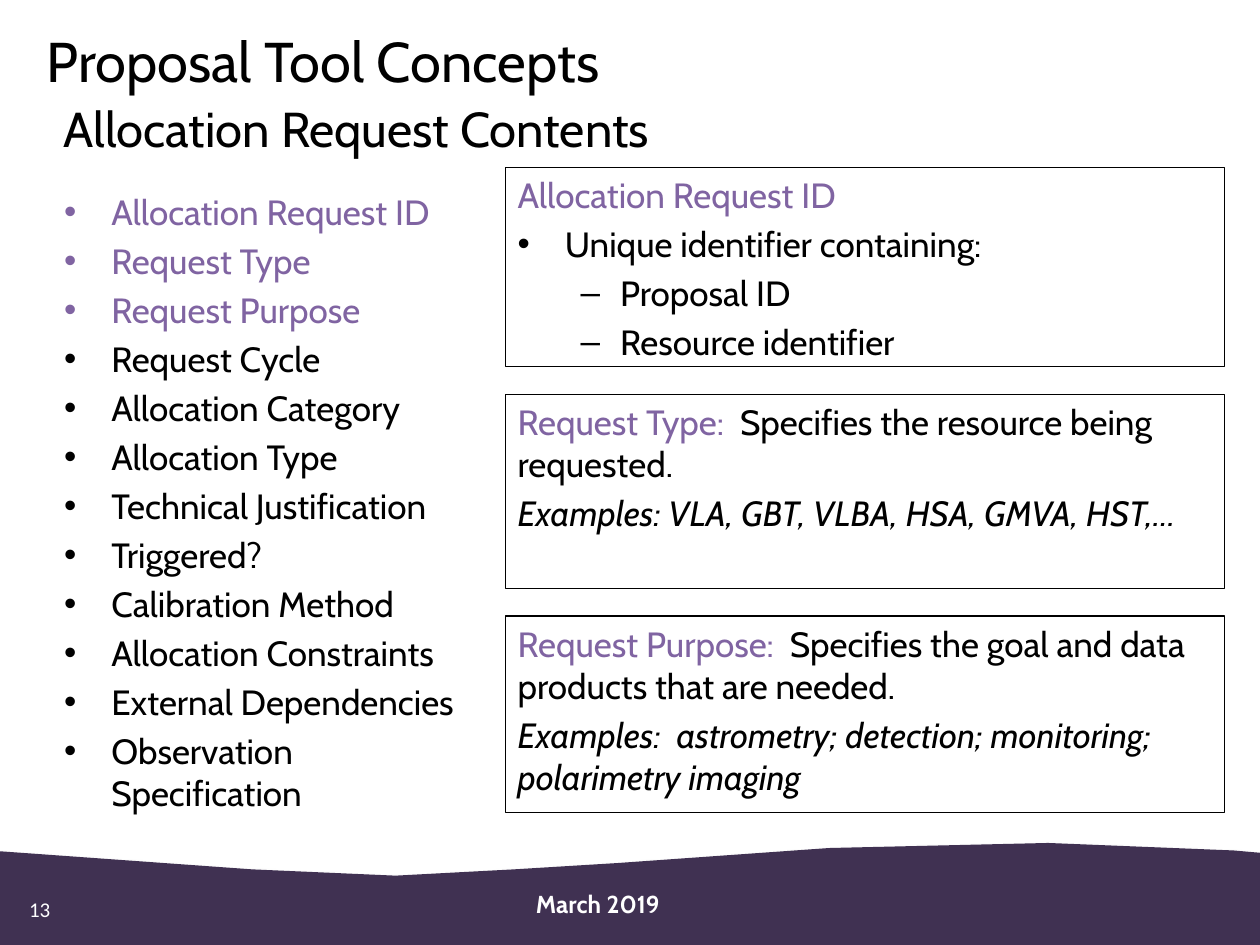
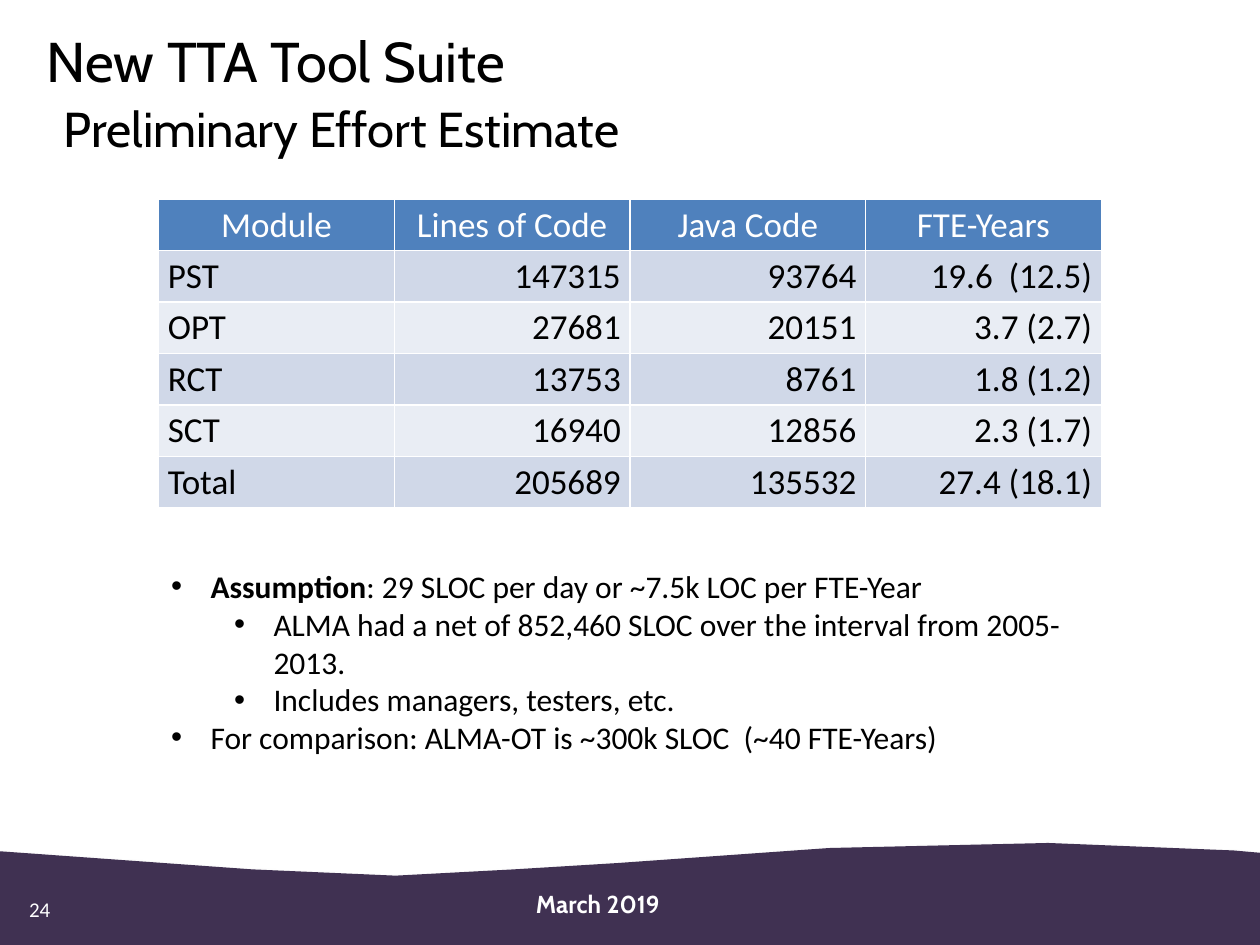
from lxml.etree import SubElement
from pptx import Presentation
from pptx.dml.color import RGBColor
from pptx.enum.shapes import MSO_SHAPE as Shape
from pptx.enum.text import MSO_ANCHOR as Anchor, MSO_AUTO_SIZE as AutoSize, PP_ALIGN as Align
from pptx.oxml.ns import qn
from pptx.util import Pt

BLACK = RGBColor(0x00, 0x00, 0x00)
WHITE = RGBColor(0xFF, 0xFF, 0xFF)
BAND_PURPLE = RGBColor(0x40, 0x31, 0x52)
TERM_PURPLE = RGBColor(0x80, 0x64, 0xA2)
HEADER_BLUE = RGBColor(0x4F, 0x81, 0xBD)
ROW_DARK = RGBColor(0xD0, 0xD8, 0xE8)
ROW_LIGHT = RGBColor(0xE9, 0xED, 0xF4)

HEADING_FONT = "Cabin"
BODY_FONT = "Calibri"

WAVE = [(-6.5, 486), (144, 496.8), (226, 500.4), (293.8, 496.8), (352.8, 493.2),
        (473.8, 484.6), (599, 481.7), (704.9, 486), (730, 488.2), (729.4, 547.2), (-5, 545.8)]

HIGHLIGHTED_FIELDS = ["Allocation Request ID", "Request Type", "Request Purpose"]
OTHER_FIELDS = ["Request Cycle", "Allocation Category", "Allocation Type",
                "Technical Justification", "Triggered?", "Calibration Method",
                "Allocation Constraints", "External Dependencies", "Observation Specification"]

ITEM = dict(bullet="•", margin=27, hanging=27)
SUBITEM = dict(bullet="–", margin=58.5, hanging=22.5, level=1)
DEFINITIONS = [
    (113.8, [
        ([("Allocation Request ID", TERM_PURPLE)], {}),
        ("Unique identifier containing:", ITEM),
        ("Proposal ID", SUBITEM),
        ("Resource identifier", SUBITEM)]),
    (110.9, [
        ([("Request Type:  ", TERM_PURPLE), ("Specifies the resource being requested.", BLACK)], {}),
        ("Examples: VLA, GBT, VLBA, HSA, GMVA, HST,…", dict(italic=True))]),
    (112.3, [
        ([("Request Purpose:  ", TERM_PURPLE),
          ("Specifies the goal and data products that are needed.", BLACK)], {}),
        ("Examples:  astrometry; detection; monitoring; polarimetry imaging", dict(italic=True))]),
]

EFFORT = [
    ("Module", "Lines of Code", "Java Code", "FTE-Years"),
    ("PST", "147315", "93764", "19.6  (12.5)"),
    ("OPT", "27681", "20151", "3.7 (2.7)"),
    ("RCT", "13753", "8761", "1.8 (1.2)"),
    ("SCT", "16940", "12856", "2.3 (1.7)"),
    ("Total", "205689", "135532", "27.4 (18.1)"),
]


def write(frame, text, font=HEADING_FONT, size=20, color=BLACK, bold=False, italic=False,
          align=Align.LEFT, before=0, bullet=None, margin=0, hanging=0, level=0, lead=""):
    started = bool(frame.text)
    paragraph = frame.add_paragraph() if started else frame.paragraphs[0]
    paragraph.alignment = align
    paragraph.level = level
    paragraph.space_before = Pt(before if started else 0)
    if bullet:
        properties = paragraph._p.get_or_add_pPr()
        properties.set("marL", str(Pt(margin)))
        properties.set("indent", str(-Pt(hanging)))
        SubElement(properties, qn("a:buFont"), typeface="Arial")
        SubElement(properties, qn("a:buChar"), char=bullet)
    pieces = [(text, color)] if isinstance(text, str) else text
    pieces = [(words, tint, bold) for words, tint in pieces]
    if lead:
        pieces.insert(0, (lead, color, True))
    for words, tint, strong in pieces:
        run = paragraph.add_run()
        run.text = words
        run.font.name = font
        run.font.size = Pt(size)
        run.font.color.rgb = tint
        run.font.bold = strong
        run.font.italic = italic


def add_text_area(slide, left, top, width, height, wrap=True, inset=True):
    frame = slide.shapes.add_textbox(Pt(left), Pt(top), Pt(width), Pt(height)).text_frame
    frame.word_wrap = wrap
    if not inset:
        frame.margin_left = frame.margin_top = frame.margin_right = frame.margin_bottom = 0
    return frame


def add_band(slide):
    builder = slide.shapes.build_freeform(Pt(WAVE[0][0]), Pt(WAVE[0][1]))
    builder.add_line_segments([(Pt(x), Pt(y)) for x, y in WAVE[1:]], close=True)
    band = builder.convert_to_shape()
    band.fill.solid()
    band.fill.fore_color.rgb = BAND_PURPLE
    band.line.fill.background()
    band.shadow.inherit = False
    effects = band._element.spPr.find(qn("a:effectLst"))
    shadow = SubElement(effects, qn("a:outerShdw"), blurRad=str(Pt(3.1)), dist=str(Pt(1.8)),
                        dir="5400000", rotWithShape="0")
    shade = SubElement(shadow, qn("a:srgbClr"), val=str(BLACK))
    SubElement(shade, qn("a:alpha"), val="35000")


def start_slide(deck, heading, subheading, number):
    slide = deck.slides.add_slide(deck.slide_layouts[5])
    add_band(slide)
    write(add_text_area(slide, 16.6, 512.6, 296.6, 17.3, wrap=False, inset=False),
          number, font=BODY_FONT, size=12, color=WHITE)
    write(add_text_area(slide, 136.8, 504.7, 409.7, 30.2), "March 2019",
          size=14, color=WHITE, bold=True, align=Align.CENTER)
    title = slide.shapes.title
    title.left, title.top, title.width, title.height = Pt(19.4), Pt(11.5), Pt(679.7), Pt(37.4)
    title.text_frame.vertical_anchor = Anchor.TOP
    title.text_frame.auto_size = AutoSize.NONE
    write(title.text_frame, heading, size=32)
    write(add_text_area(slide, 29.5, 52.6, 679.7, 49), subheading, size=28)
    return slide


def add_definition(slide, top, height, lines):
    box = slide.shapes.add_shape(Shape.RECTANGLE, Pt(288.7), Pt(top), Pt(411.1), Pt(height))
    box.shadow.inherit = False
    box.fill.background()
    box.line.color.rgb = BLACK
    box.line.width = Pt(0.75)
    box.text_frame.word_wrap = True
    box.text_frame.vertical_anchor = Anchor.TOP
    for text, style in lines:
        write(box.text_frame, text, before=4, **style)


def outline_cell(cell):
    properties = cell._tc.get_or_add_tcPr()
    for position, side in enumerate(("lnL", "lnR", "lnT", "lnB")):
        edge = SubElement(properties, qn(f"a:{side}"), w=str(Pt(1)))
        fill = SubElement(edge, qn("a:solidFill"))
        SubElement(fill, qn("a:srgbClr"), val=str(WHITE))
        properties.insert(position, edge)


def add_effort_table(slide):
    table = slide.shapes.add_table(len(EFFORT), len(EFFORT[0]), Pt(90.7), Pt(113.8),
                                   Pt(538.6), Pt(176.4)).table
    for row, values in enumerate(EFFORT):
        for column, value in enumerate(values):
            cell = table.cell(row, column)
            cell.margin_left = cell.margin_right = Pt(5.2)
            cell.margin_top = cell.margin_bottom = Pt(2.6)
            header = row == 0
            cell.fill.solid()
            cell.fill.fore_color.rgb = HEADER_BLUE if header else (ROW_LIGHT, ROW_DARK)[row % 2]
            outline_cell(cell)
            align = Align.CENTER if header else Align.RIGHT if column else Align.LEFT
            write(cell.text_frame, value, font=BODY_FONT,
                  color=WHITE if header else BLACK, align=align)


def build_contents_slide(deck):
    slide = start_slide(deck, "Proposal Tool Concepts", "Allocation Request Contents", "13")
    fields = add_text_area(slide, 29.5, 105.1, 251.3, 359.3)
    for names, color in ((HIGHLIGHTED_FIELDS, TERM_PURPLE), (OTHER_FIELDS, BLACK)):
        for name in names:
            write(fields, name, color=color, before=4, **ITEM)
    top, gap = 95.8, 15.8
    for height, lines in DEFINITIONS:
        add_definition(slide, top, height, lines)
        top += height + gap


def build_estimate_slide(deck):
    slide = start_slide(deck, "New TTA Tool Suite", "Preliminary Effort Estimate", "24")
    add_effort_table(slide)
    notes = add_text_area(slide, 90.7, 320.4, 538.6, 116.6)
    point = dict(font=BODY_FONT, size=18, bullet="•", margin=22.5, hanging=22.5)
    detail = {**point, "margin": 58.5, "level": 1}
    write(notes, ": 29 SLOC per day or ~7.5k LOC per FTE-Year", lead="Assumption", **point)
    write(notes, "ALMA had a net of 852,460 SLOC over the interval from 2005-2013.", **detail)
    write(notes, "Includes managers, testers, etc.", **detail)
    write(notes, "For comparison: ALMA-OT is ~300k SLOC  (~40 FTE-Years)", **point)


def main():
    deck = Presentation()
    deck.slide_width, deck.slide_height = Pt(720), Pt(540)
    build_contents_slide(deck)
    build_estimate_slide(deck)
    deck.save("out.pptx")


if __name__ == "__main__":
    main()
